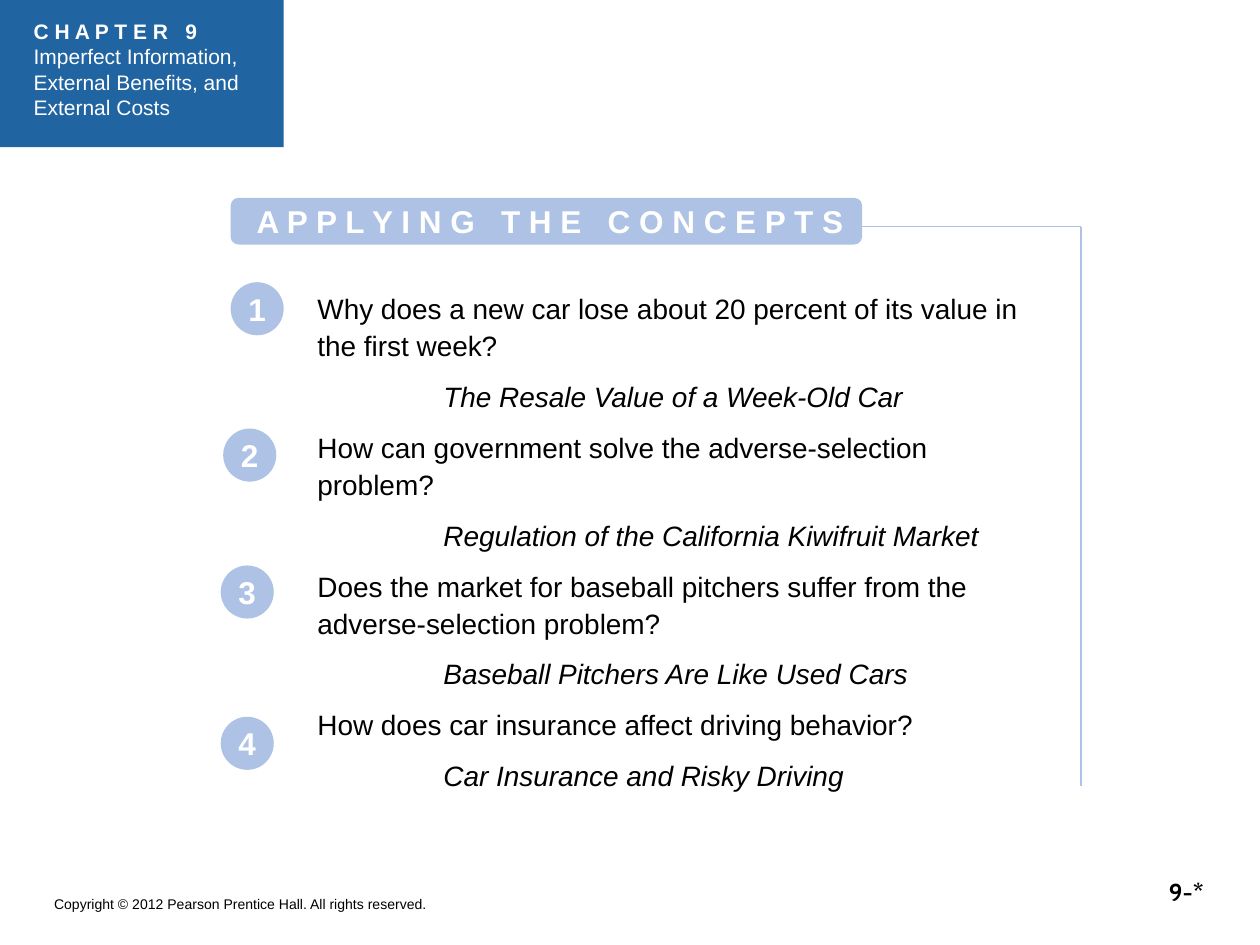
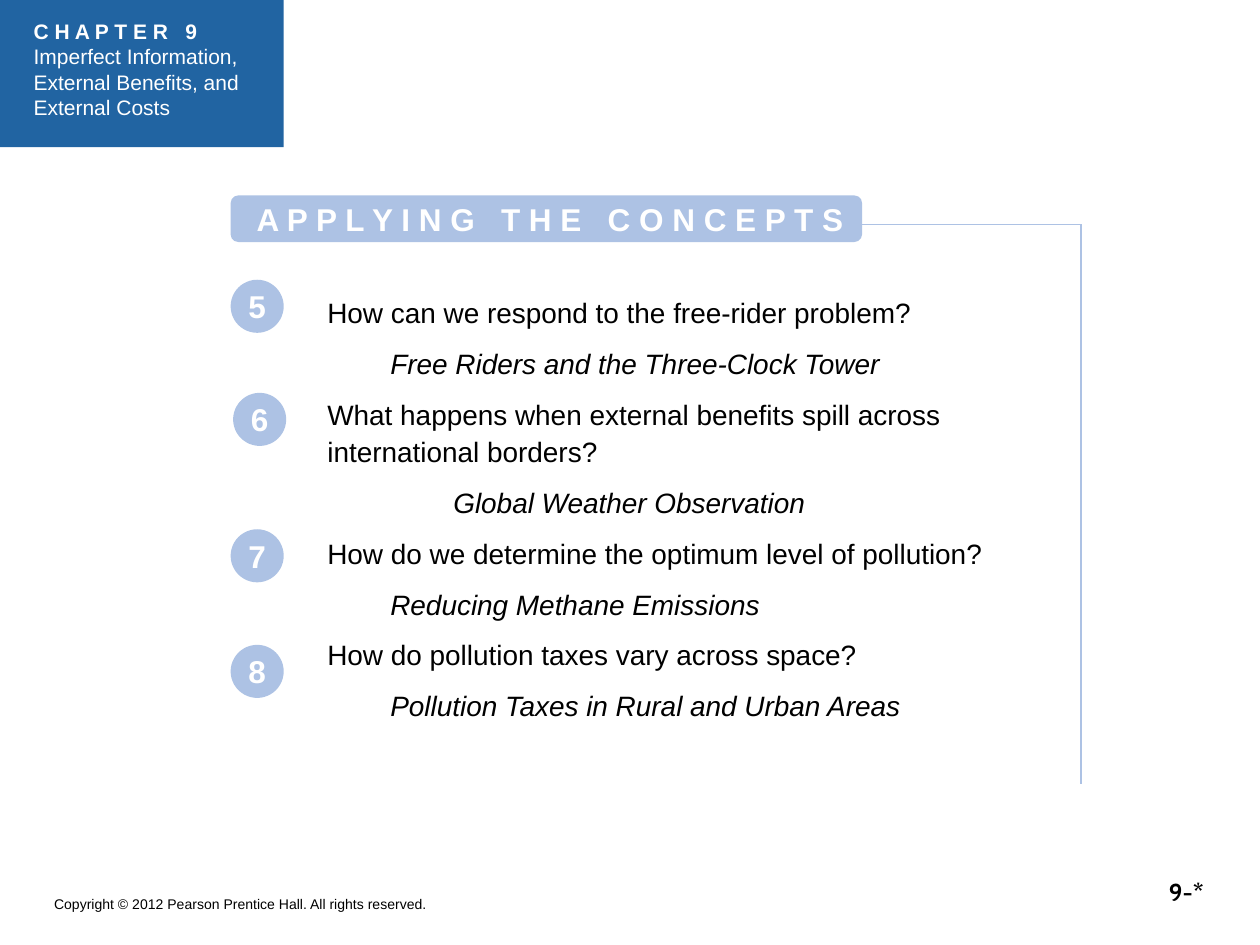
from lxml import etree
from pptx import Presentation
from pptx import util as u
from pptx.dml.color import RGBColor
from pptx.enum import shapes, text
from pptx.oxml.ns import qn

CHAPTER = "CHAPTER 9"
CHAPTER_TITLE = "Imperfect Information, External Benefits, and External Costs"
HEADING = "APPLYING THE CONCEPTS"
COPYRIGHT = "Copyright © 2012 Pearson Prentice Hall. All rights reserved."
PAGE_NUMBER = "9-*"

# Each concept: question, application, application indent, badge left and top (cm)
SLIDES = [
    {"first": 1, "heading_top": 3.99, "body": (6.15, 5.69, 15.04, 10.82), "concepts": [
        ("Why does a new car lose about 20 percent of its value in the first week?",
         "The Resale Value of a Week-Old Car", 2.54, (4.65, 5.69)),
        ("How can government solve the adverse-selection problem?",
         "Regulation of the California Kiwifruit Market", 2.54, (4.5, 8.64)),
        ("Does the market for baseball pitchers suffer from the adverse-selection problem?",
         "Baseball Pitchers Are Like Used Cars", 2.54, (4.45, 11.4)),
        ("How does car insurance affect driving behavior?",
         "Car Insurance and Risky Driving", 2.54, (4.45, 14.45)),
    ]},
    {"first": 5, "heading_top": 3.94, "body": (6.35, 5.77, 15.24, 10.41), "concepts": [
        ("How can we respond to the free-rider problem?",
         "Free Riders and the Three-Clock Tower", 1.27, (4.65, 5.64)),
        ("What happens when external benefits spill across international borders?",
         "Global Weather Observation", 2.54, (4.7, 7.92)),
        ("How do we determine the optimum level of pollution?",
         "Reducing Methane Emissions", 1.27, (4.65, 10.67)),
        ("How do pollution taxes vary across space?",
         "Pollution Taxes in Rural and Urban Areas", 1.27, (4.65, 13.0)),
    ]},
]

NAVY, PALE, WHITE, BLACK = "2164A2", "ADC2E4", "FFFFFF", "000000"
BADGE = 1.07
HEADING_LEFT, HEADING_WIDTH, HEADING_HEIGHT = 4.65, 12.73, 0.94
RULE_DROP, RULE_LEFT, RULE_RIGHT, RULE_LENGTH = 0.58, 17.15, 21.79, 11.28

CHAPTER_FONT = {"name": "Arial", "size": u.Pt(12), "color": WHITE}
HEADING_FONT = {"name": "Arial", "size": u.Pt(18), "bold": True, "color": WHITE}
BODY_FONT = {"name": "Arial", "size": u.Pt(16), "color": BLACK}
COPYRIGHT_FONT = {"name": "Arial", "size": u.Pt(8), "color": BLACK}
PAGE_FONT = {"name": "Cabin", "size": u.Pt(14), "bold": True, "color": BLACK}


def rgb(color):
    return RGBColor.from_string(color)


def cm(lengths):
    return [u.Cm(length) for length in lengths]


def spaced(words):
    """Set a space after every letter, as in the headings."""
    return " ".join(words)


def set_all(target, values):
    for key, value in values.items():
        setattr(target, key, value)


def write(frame, lines, frame_format=None):
    """Fill a text frame with (wording, font, paragraph format) lines."""
    set_all(frame, {"word_wrap": True, **(frame_format or {})})
    for i, (wording, font, paragraph_format) in enumerate(lines):
        paragraph = frame.add_paragraph() if i else frame.paragraphs[0]
        paragraph.text = wording
        indent = paragraph_format.get("indent")
        if indent:
            paragraph._p.get_or_add_pPr().set("marL", str(u.Cm(indent)))
        set_all(paragraph, {"alignment": text.PP_ALIGN.LEFT,
                            **{k: v for k, v in paragraph_format.items() if k != "indent"}})
        set_all(paragraph.font, {k: v for k, v in font.items() if k != "color"})
        paragraph.font.color.rgb = rgb(font["color"])


def add_block(slide, preset, place, color):
    block = slide.shapes.add_shape(preset, *cm(place))
    block.shadow.inherit = False
    block.fill.solid()
    block.fill.fore_color.rgb = rgb(color)
    block.line.fill.background()
    return block


def add_text(slide, place, lines, frame_format=None):
    write(slide.shapes.add_textbox(*cm(place)).text_frame, lines, frame_format)


def add_rule(slide, *ends):
    rule = slide.shapes.add_connector(shapes.MSO_CONNECTOR.STRAIGHT, *cm(ends))
    rule.line.color.rgb = rgb(PALE)
    rule.line.width = u.Pt(0.75)
    etree.SubElement(rule._element.spPr, qn("a:effectLst"))


def add_frame(slide):
    """Draw the chapter band and the footer."""
    band = add_block(slide, shapes.MSO_SHAPE.RECTANGLE, (0, 0, 5.72, 2.97), NAVY)
    write(band.text_frame,
          [(spaced(CHAPTER), {**CHAPTER_FONT, "bold": True}, {}),
           (CHAPTER_TITLE, CHAPTER_FONT, {})],
          {"vertical_anchor": text.MSO_ANCHOR.TOP, "margin_left": u.Cm(0.68),
           "margin_top": u.Cm(0.38), "margin_right": 0})
    add_text(slide, (22.86, 17.35, 2.11, 1.27),
             [(PAGE_NUMBER, PAGE_FONT, {"alignment": text.PP_ALIGN.CENTER})],
             {"vertical_anchor": text.MSO_ANCHOR.MIDDLE})
    add_text(slide, (0.84, 17.93, 12.7, 0.58), [(COPYRIGHT, COPYRIGHT_FONT, {})])


def add_heading(slide, top):
    rule_top = top + RULE_DROP
    add_rule(slide, RULE_RIGHT, rule_top, RULE_RIGHT, rule_top + RULE_LENGTH)
    add_rule(slide, RULE_LEFT, rule_top, RULE_RIGHT, rule_top)
    heading = add_block(slide, shapes.MSO_SHAPE.ROUNDED_RECTANGLE,
                        (HEADING_LEFT, top, HEADING_WIDTH, HEADING_HEIGHT), PALE)
    write(heading.text_frame, [(spaced(HEADING), HEADING_FONT, {})],
          {"word_wrap": False, "margin_left": u.Cm(0.48), "margin_right": 0,
           "vertical_anchor": text.MSO_ANCHOR.MIDDLE})


def add_badge(slide, number, corner):
    badge = add_block(slide, shapes.MSO_SHAPE.OVAL, (*corner, BADGE, BADGE), PALE)
    write(badge.text_frame,
          [(str(number), HEADING_FONT, {"alignment": text.PP_ALIGN.CENTER})],
          {"margin_left": 0, "margin_right": 0, "margin_top": 0, "margin_bottom": 0,
           "vertical_anchor": text.MSO_ANCHOR.MIDDLE})


def add_concepts(slide, body, first, concepts):
    lines = []
    for number, (question, application, indent, corner) in enumerate(concepts, first):
        gap = {"space_before": u.Pt(8)} if lines else {}
        lines.append((question, BODY_FONT, {"line_spacing": 1.1, **gap}))
        lines.append((application, {**BODY_FONT, "italic": True},
                      {"line_spacing": 1.1, "space_before": u.Pt(8), "indent": indent}))
        add_badge(slide, number, corner)
    add_text(slide, body, lines)


def main():
    deck = Presentation()
    deck.slide_width, deck.slide_height = cm((25.4, 19.05))
    for content in SLIDES:
        slide = deck.slides.add_slide(deck.slide_layouts[6])
        add_frame(slide)
        add_heading(slide, content["heading_top"])
        add_concepts(slide, content["body"], content["first"], content["concepts"])
    deck.save("out.pptx")


if __name__ == "__main__":
    main()
